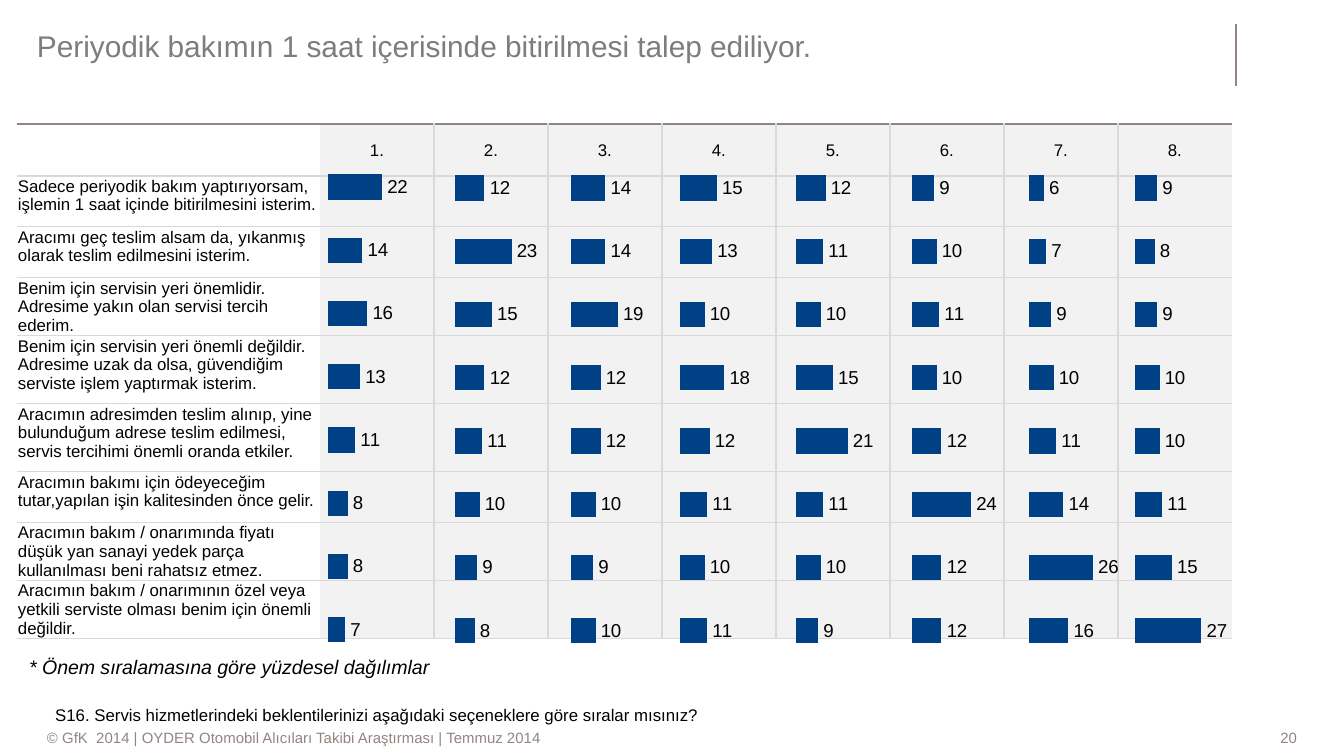
from dataclasses import dataclass
from lxml.etree import SubElement
from pptx import Presentation
from pptx.chart.data import CategoryChartData
from pptx.dml.color import RGBColor
from pptx.enum.chart import XL_CHART_TYPE, XL_LABEL_POSITION
from pptx.enum.shapes import MSO_CONNECTOR
from pptx.enum.text import MSO_ANCHOR, PP_ALIGN
from pptx.oxml import parse_xml
from pptx.oxml.ns import nsdecls, qn
from pptx.util import Pt


@dataclass(frozen=True)
class Theme:
    font: str = "Arial"
    ink: str = "000000"
    heading: str = "7D7D7D"
    muted: str = "928580"
    grid: str = "D9D9D9"
    band: str = "F2F2F2"
    bar: str = "004186"
    heading_size: float = 16
    note_size: float = 10.5
    value_size: float = 10
    body_size: float = 9
    footer_size: float = 8
    chart_size: float = 18


theme = Theme()
PX = 914400 / 134.4


def px(*lengths):
    return [round(length * PX) for length in lengths]


def write(frame, text, size, color, align=PP_ALIGN.LEFT, italic=False):
    frame.text = text
    frame.word_wrap = True
    paragraph = frame.paragraphs[0]
    paragraph.alignment = align
    font = paragraph.runs[0].font
    font.name = theme.font
    font.size = Pt(size)
    font.italic = italic
    font.color.rgb = RGBColor.from_string(color)


statements = [
    ("Sadece periyodik bakım yaptırıyorsam, işlemin 1 saat içinde bitirilmesini isterim.",
     51, [22, 12, 14, 15, 12, 9, 6, 9]),
    ("Aracımı geç teslim alsam da, yıkanmış olarak teslim edilmesini isterim.",
     51, [14, 23, 14, 13, 11, 10, 7, 8]),
    ("Benim için servisin yeri önemlidir. Adresime yakın olan servisi tercih ederim.",
     58, [16, 15, 19, 10, 10, 11, 9, 9]),
    ("Benim için servisin yeri önemli değildir. Adresime uzak da olsa, güvendiğim serviste işlem yaptırmak isterim.",
     68, [13, 12, 12, 18, 15, 10, 10, 10]),
    ("Aracımın adresimden teslim alınıp, yine bulunduğum adrese teslim edilmesi, servis tercihimi önemli oranda etkiler.",
     68, [11, 11, 12, 12, 21, 12, 11, 10]),
    ("Aracımın bakımı için ödeyeceğim tutar,yapılan işin kalitesinden önce gelir.",
     51, [8, 10, 10, 11, 11, 24, 14, 11]),
    ("Aracımın bakım / onarımında fiyatı düşük yan sanayi yedek parça kullanılması beni rahatsız etmez.",
     58, [8, 9, 9, 10, 10, 12, 26, 15]),
    ("Aracımın bakım / onarımının özel veya yetkili serviste olması benim için önemli değildir.",
     58, [7, 8, 10, 11, 9, 12, 16, 27]),
]
ranks = [str(rank) for rank in range(1, 9)]
row_heights = [52] + [height for _, height, _ in statements]
column_widths = [303] + [114] * len(ranks)

presentation = Presentation()
presentation.slide_width, presentation.slide_height = px(1344, 756)
slide = presentation.slides.add_slide(presentation.slide_layouts[5])
shapes = slide.shapes

heading = shapes.title
heading.left, heading.top, heading.width, heading.height = px(37, 28, 1153, 63)
heading_frame = heading.text_frame
heading_frame.margin_left = heading_frame.margin_right = 0
heading_frame.margin_top = heading_frame.margin_bottom = 0
heading_frame.vertical_anchor = MSO_ANCHOR.TOP
write(heading_frame, "Periyodik bakımın 1 saat içerisinde bitirilmesi talep ediliyor.",
      theme.heading_size, theme.heading)

heading_rule = shapes.add_connector(MSO_CONNECTOR.STRAIGHT, *px(1236, 24, 1236, 86))
heading_rule.line.color.rgb = RGBColor.from_string(theme.muted)
heading_rule.line.width = Pt(0.75)
SubElement(heading_rule.element.spPr, qn("a:effectLst"))

ranking = shapes.add_table(len(row_heights), len(column_widths),
                           *px(17, 124, sum(column_widths), sum(row_heights))).table
ranking.first_row = ranking.horz_banding = False
for column, width in zip(ranking.columns, px(*column_widths)):
    column.width = width
for row, height in zip(ranking.rows, px(*row_heights)):
    row.height = height

for r in range(len(row_heights)):
    for c in range(len(column_widths)):
        cell = ranking.cell(r, c)
        cell.margin_left = cell.margin_right = cell.margin_top = px(1)[0]
        cell.margin_bottom = 0
        if r == 0 and c > 0:
            write(cell.text_frame, f"{ranks[c - 1]}.", theme.body_size, theme.ink, PP_ALIGN.CENTER)
            cell.vertical_anchor = MSO_ANCHOR.MIDDLE
        elif r > 0 and c == 0:
            write(cell.text_frame, statements[r - 1][0], theme.body_size, theme.ink)
        borders = {
            "lnL": (theme.grid if c > 1 else None, 1),
            "lnR": (theme.grid if 0 < c < len(ranks) else None, 1),
            "lnT": (theme.grid if r else theme.muted, 0.75),
            "lnB": (theme.grid, 0.75),
        }
        for side, (color, width) in borders.items():
            edge = SubElement(cell._tc.get_or_add_tcPr(), qn(f"a:{side}"), w=str(Pt(width)))
            if color:
                SubElement(SubElement(edge, qn("a:solidFill")), qn("a:srgbClr"), val=color)
            else:
                SubElement(edge, qn("a:noFill"))
        if c:
            cell.fill.solid()
            cell.fill.fore_color.rgb = RGBColor.from_string(theme.band)
        else:
            cell.fill.background()

chart_lefts = [323, 450, 566, 675, 791, 907, 1024, 1130]
for index, left in enumerate(chart_lefts):
    shares = CategoryChartData(number_format="#,##0")
    shares.categories = ranks
    shares.add_series("Series 1", [values[index] for _, _, values in reversed(statements)])
    top = 146 if index else 145
    chart = shapes.add_chart(XL_CHART_TYPE.BAR_CLUSTERED, *px(left, top, 251, 527), shares).chart
    chart.has_legend = chart.has_title = False
    chart.font.name = theme.font
    chart.font.size = Pt(theme.chart_size)
    chart.font.color.rgb = RGBColor.from_string(theme.ink)
    chart.category_axis.visible = chart.value_axis.visible = False
    chart.value_axis.has_major_gridlines = False
    chart.value_axis.minimum_scale = 0
    chart.value_axis.maximum_scale = 100
    chart.value_axis.major_unit = 5
    bars = chart.plots[0]
    bars.vary_by_categories = False
    bars.gap_width = 150
    bars.series[0].format.fill.solid()
    bars.series[0].format.fill.fore_color.rgb = RGBColor.from_string(theme.bar)
    bars.has_data_labels = True
    labels = bars.data_labels
    labels.show_value = True
    labels.position = XL_LABEL_POSITION.OUTSIDE_END
    labels.number_format = "#,##0"
    labels.number_format_is_linked = False
    labels.font.name = theme.font
    labels.font.size = Pt(theme.value_size)
    labels.font.color.rgb = RGBColor.from_string(theme.ink)
    plot_area = chart.element.find(f".//{qn('c:plotArea')}")
    for automatic in plot_area.findall(qn("c:layout")):
        plot_area.remove(automatic)
    plot_area.insert(0, parse_xml(
        f'<c:layout {nsdecls("c")}><c:manualLayout><c:layoutTarget val="inner"/>'
        '<c:xMode val="edge"/><c:yMode val="edge"/><c:x val="0.02"/><c:y val="0.02"/>'
        '<c:w val="0.98"/><c:h val="0.96"/></c:manualLayout></c:layout>'))

captions = [
    ((42, 698, 1077, 34), theme.body_size, theme.ink, False,
     "S16. Servis hizmetlerindeki beklentilerinizi aşağıdaki seçeneklere göre sıralar mısınız?"),
    ((16, 648, 672, 39), theme.note_size, theme.ink, True,
     "* Önem sıralamasına göre yüzdesel dağılımlar"),
]
for box, size, color, italic, text in captions:
    write(shapes.add_textbox(*px(*box)).text_frame, text, size, color, italic=italic)

footers = [
    ((47, 727, 1038, 22), PP_ALIGN.LEFT,
     "© GfK  2014 | OYDER Otomobil Alıcıları Takibi Araştırması | Temmuz 2014"),
    ((1106, 727, 191, 22), PP_ALIGN.RIGHT, "20"),
]
for box, align, text in footers:
    footer_frame = shapes.add_textbox(*px(*box)).text_frame
    footer_frame.margin_left = footer_frame.margin_right = 0
    footer_frame.margin_top = footer_frame.margin_bottom = 0
    footer_frame.vertical_anchor = MSO_ANCHOR.MIDDLE
    write(footer_frame, text, theme.footer_size, theme.muted, align)

presentation.save("out.pptx")
